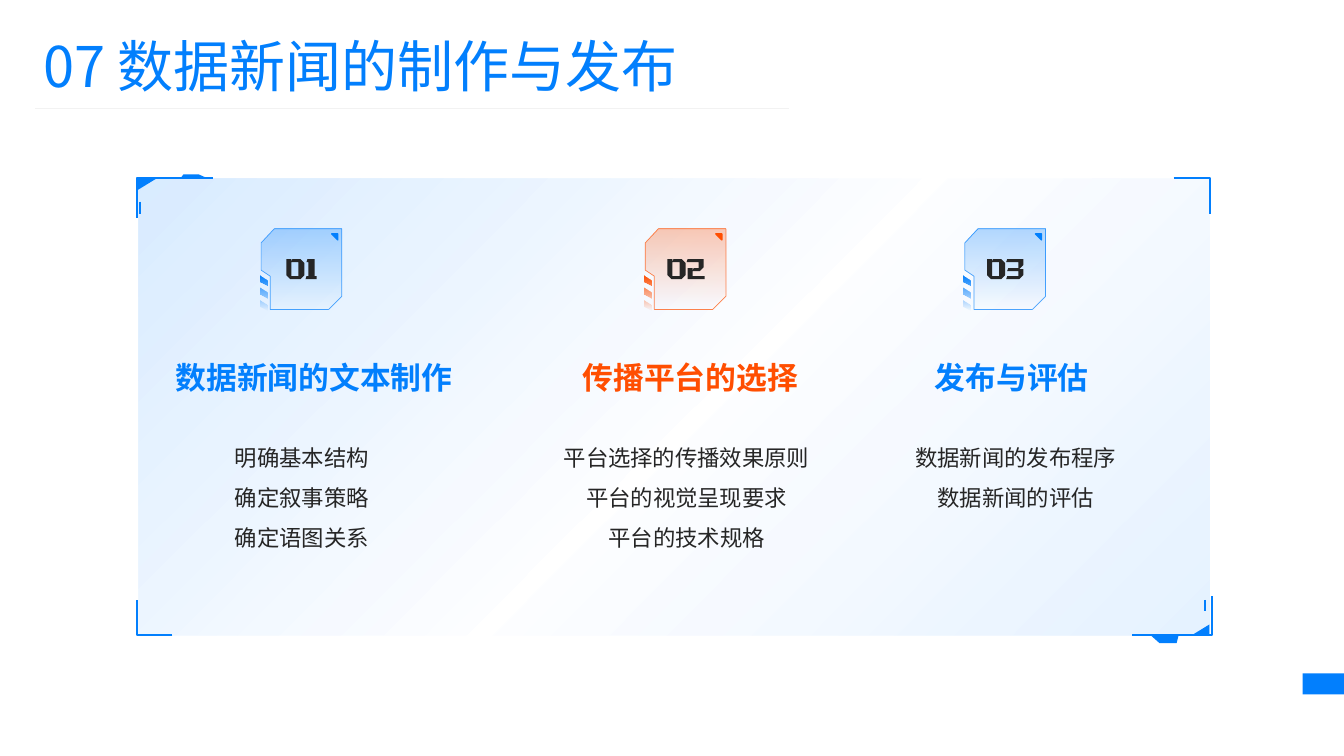
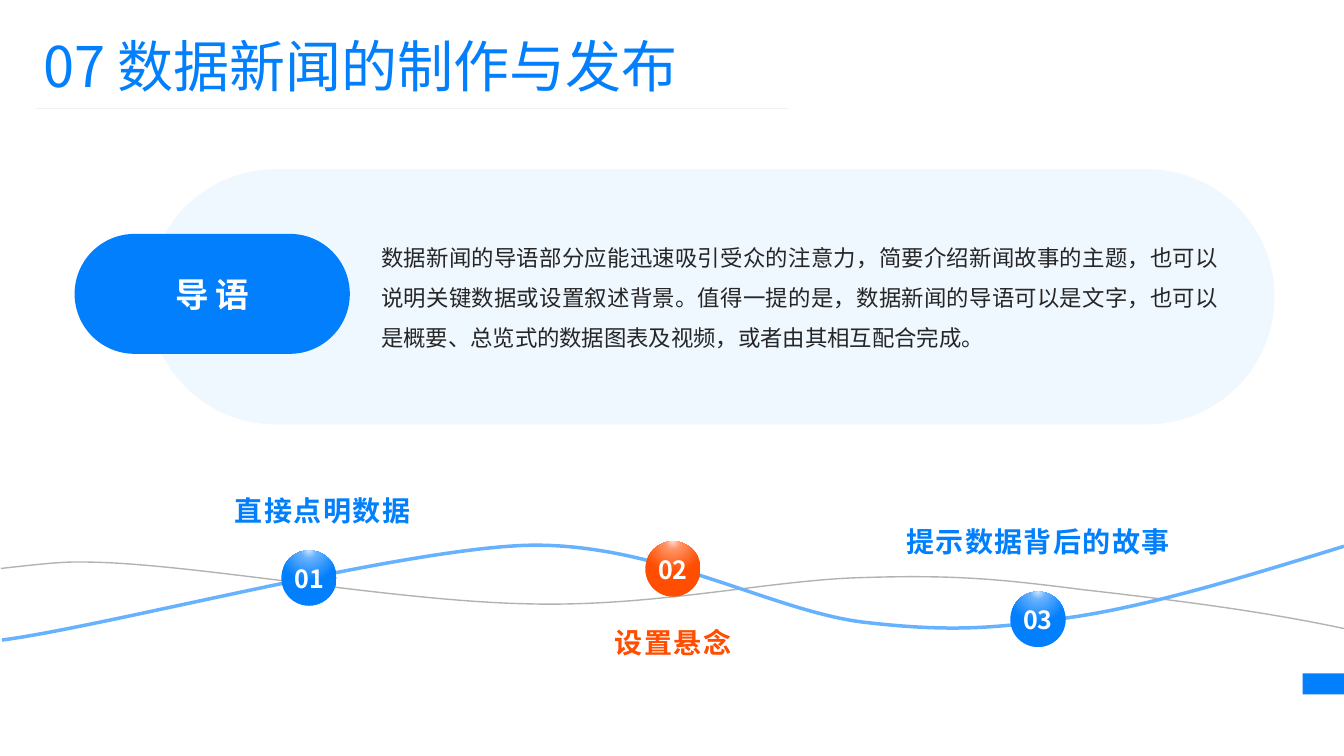
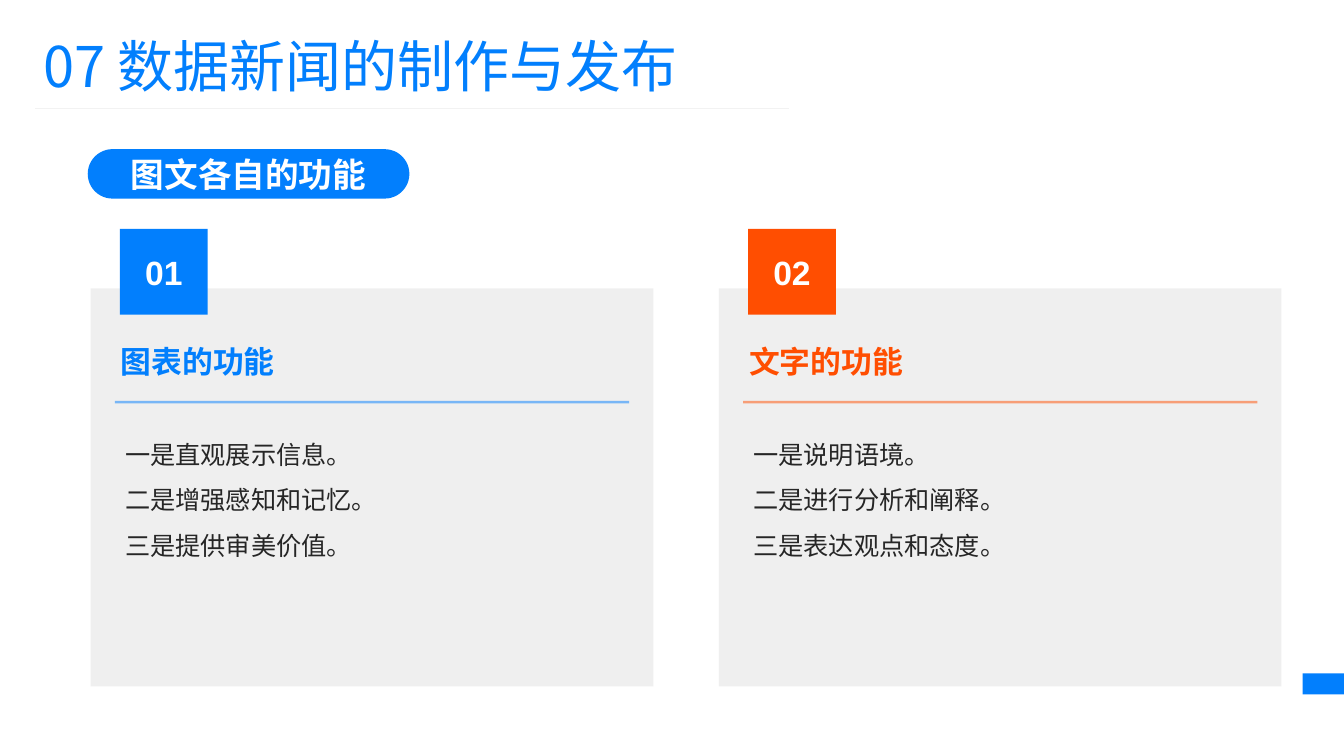
from dataclasses import dataclass

from lxml import etree
from pptx import Presentation
from pptx.dml.color import RGBColor
from pptx.enum.shapes import MSO_CONNECTOR, MSO_SHAPE
from pptx.enum.text import MSO_ANCHOR, PP_ALIGN
from pptx.oxml import parse_xml
from pptx.oxml.ns import nsdecls, qn
from pptx.util import Inches, Pt

RECTANGLE = MSO_SHAPE.RECTANGLE
ROUNDED = MSO_SHAPE.ROUNDED_RECTANGLE
OVAL = MSO_SHAPE.OVAL
TRIANGLE = MSO_SHAPE.ISOSCELES_TRIANGLE
STRAIGHT = MSO_CONNECTOR.STRAIGHT
LEFT, CENTER, JUSTIFY = PP_ALIGN.LEFT, PP_ALIGN.CENTER, PP_ALIGN.JUSTIFY
TOP, MIDDLE, BOTTOM = MSO_ANCHOR.TOP, MSO_ANCHOR.MIDDLE, MSO_ANCHOR.BOTTOM

FONT = "Noto Sans CJK SC"
COLORS = {
    "blue": "027FFD", "orange": "FF4E01", "text": "262626", "white": "FFFFFF",
    "rule": "F2F2F2", "gray": "808080", "card": "999999",
    "pale blue": "CCE5FF", "soft blue": "67B2FE",
    "pale orange": "FFDCCC", "soft orange": "FF9567",
}

Point = tuple[float, float]
Box = tuple[float, float, float, float]
Stop = tuple[int, str, int]


@dataclass
class TextStyle:
    size: float
    color: str = "text"
    bold: bool = False
    align: PP_ALIGN = LEFT
    anchor: MSO_ANCHOR = TOP
    line_spacing: float = 1.0
    tracking: float = 0
    font: str = FONT


@dataclass
class Topic:
    number: str
    color: str
    badge_left: float
    digits_left: float
    heading: str
    heading_box: Box
    lines: list[str]
    lines_box: Box


@dataclass
class Milestone:
    number: str
    color: str
    ball: Point
    label: str
    label_box: Box


@dataclass
class Card:
    number: str
    color: str
    left: float
    heading: str
    lines: list[str]


TITLE = TextStyle(40, "blue")
TOPICS = [
    Topic("01", "blue", 2.59, 2.84, "数据新闻的文本制作", (1.69, 3.56, 2.85, 0.37),
          ["明确基本结构", "确定叙事策略", "确定语图关系"], (1.69, 4.27, 2.61, 1.79)),
    Topic("02", "orange", 6.4, 6.62, "传播平台的选择", (5.19, 3.56, 3.31, 0.37),
          ["平台选择的传播效果原则", "平台的视觉呈现要求", "平台的技术规格"],
          (5.5, 4.27, 2.62, 1.79)),
    Topic("03", "blue", 9.57, 9.79, "发布与评估", (8.26, 3.56, 3.55, 0.37),
          ["数据新闻的发布程序", "数据新闻的评估"], (8.26, 4.27, 3.63, 1.79)),
]
MILESTONES = [
    Milestone("03", "blue", (10.02, 5.87), "提示数据背后的故事", (8.89, 5.16, 2.81, 0.42)),
    Milestone("02", "orange", (6.4, 5.37), "设置悬念", (5.27, 6.16, 2.81, 0.42)),
    Milestone("01", "blue", (2.79, 5.46), "直接点明数据", (1.34, 4.85, 3.72, 0.42)),
]
CARDS = [
    Card("01", "blue", 0.9, "图表的功能",
         ["一是直观展示信息。", "二是增强感知和记忆。", "三是提供审美价值。"]),
    Card("02", "orange", 7.13, "文字的功能",
         ["一是说明语境。", "二是进行分析和阐释。", "三是表达观点和态度。"]),
]
LEAD = ("数据新闻的导语部分应能迅速吸引受众的注意力，简要介绍新闻故事的主题，也可以"
        "说明关键数据或设置叙述背景。值得一提的是，数据新闻的导语可以是文字，也可以"
        "是概要、总览式的数据图表及视频，或者由其相互配合完成。")

# Badge outline and squared numerals, relative to their top left corners
BADGE = [(0.13, 0), (0.8, 0), (0.8, 0.67), (0.67, 0.8), (0.09, 0.8),
         (0.09, 0.47), (0, 0.41), (0, 0.14)]
DIGITS = {
    "0": [[(0, 0), (0.05, 0), (0.05, 0.17), (0.12, 0.17), (0.12, 0.03), (0.05, 0.03),
           (0.06, 0), (0.14, 0), (0.18, 0.04), (0.18, 0.16), (0.14, 0.2), (0.04, 0.2),
           (0, 0.16)]],
    "1": [[(0.02, 0), (0.09, 0), (0.09, 0.17), (0.11, 0.17), (0.11, 0.2), (0, 0.2),
           (0.01, 0.17), (0.03, 0.17), (0.03, 0.03), (0.01, 0.03)]],
    "2": [[(0.01, 0.09), (0.06, 0.09), (0.06, 0.17), (0.18, 0.17), (0.18, 0.2), (0.01, 0.2)],
          [(0.01, 0), (0.17, 0), (0.17, 0.08), (0.13, 0.12), (0.06, 0.12), (0.07, 0.09),
           (0.12, 0.09), (0.12, 0.03), (0, 0.03)]],
    "3": [[(0.01, 0), (0.17, 0), (0.17, 0.06), (0.13, 0.1), (0.17, 0.1), (0.17, 0.16),
           (0.13, 0.2), (0, 0.2), (0.01, 0.17), (0.12, 0.17), (0.12, 0.12), (0.01, 0.12),
           (0.02, 0.09), (0.12, 0.09), (0.12, 0.03), (0, 0.03)]],
}

# Panel corner brackets and tabs
BRACKETS = [
    [(11.64, 1.77), (12, 1.77), (12, 2.12)],
    [(11.23, 6.3), (12.02, 6.3), (12.02, 5.91)],
    [(2.11, 1.77), (1.36, 1.77), (1.36, 2.16)],
    [(1.71, 6.3), (1.36, 6.3), (1.36, 5.95)],
]
TABS = [
    [(11.5, 6.38), (11.41, 6.3), (11.69, 6.3), (11.67, 6.38)],
    [(1.97, 1.73), (2.06, 1.77), (1.79, 1.77), (1.82, 1.73)],
]

# Waves: a start point, then two control points and an end for each curve
GRAY_WAVE = [(0.01, 5.64), (0.63, 5.57), (0.68, 5.57), (1.01, 5.58),
             (2.07, 5.62), (3.92, 5.96), (5.2, 5.99), (6.48, 6.03), (7.65, 5.75),
             (8.57, 5.73), (9.49, 5.7), (9.95, 5.75), (10.74, 5.85),
             (11.52, 5.94), (12.47, 6.05), (13.35, 6.24)]
BLUE_WAVE = [(0.02, 6.35), (1.08, 6.21), (3.95, 5.45), (5.23, 5.41),
             (6.5, 5.38), (7.63, 6.05), (8.54, 6.17), (9.46, 6.28), (9.93, 6.23),
             (10.72, 6.11), (11.52, 5.98), (12.42, 5.7), (13.33, 5.42)]


def rgb(name: str) -> RGBColor:
    return RGBColor.from_string(COLORS[name])


def set_opacity(holder, percent: float) -> None:
    color = holder.find(qn("a:solidFill"))[0]
    etree.SubElement(color, qn("a:alpha"), val=str(int(percent * 1000)))


def paint(shape, fill=None, opacity=100, line=None, width=1.0, line_opacity=100) -> None:
    shape.shadow.inherit = False
    properties = shape._element.spPr
    if fill:
        shape.fill.solid()
        shape.fill.fore_color.rgb = rgb(fill)
        if opacity < 100:
            set_opacity(properties, opacity)
    else:
        shape.fill.background()
    if line:
        shape.line.color.rgb = rgb(line)
        shape.line.width = Pt(width)
        if line_opacity < 100:
            set_opacity(properties.find(qn("a:ln")), line_opacity)
    else:
        shape.line.fill.background()


def make_gradient(stops: list[Stop], angle: int | None = None):
    """Without an angle the gradient is a ball highlight."""
    stop_xml = "".join(
        f'<a:gs pos="{position * 1000}"><a:srgbClr val="{COLORS[color]}">'
        f'<a:alpha val="{opacity * 1000}"/></a:srgbClr></a:gs>'
        for position, color, opacity in stops)
    if angle is None:
        direction = ('<a:path path="circle"><a:fillToRect l="50000" t="-80000" '
                     'r="50000" b="180000"/></a:path>')
    else:
        direction = f'<a:lin ang="{angle * 60000}" scaled="0"/>'
    return parse_xml(f'<a:gradFill {nsdecls("a")} rotWithShape="1">'
                     f'<a:gsLst>{stop_xml}</a:gsLst>{direction}</a:gradFill>')


def set_gradient(shape, stops: list[Stop], angle: int | None = None) -> None:
    properties = shape._element.spPr
    properties.replace(properties.find(qn("a:noFill")), make_gradient(stops, angle))


def write(shape, lines: list[str], style: TextStyle, inset: float = 0, wrap: bool = True) -> None:
    frame = shape.text_frame
    frame.word_wrap = wrap
    frame.vertical_anchor = style.anchor
    frame.margin_left = frame.margin_right = Inches(inset)
    frame.margin_top = frame.margin_bottom = Inches(inset / 2)
    frame.text = "\n".join(lines)
    for paragraph in frame.paragraphs:
        paragraph.alignment = style.align
        paragraph.line_spacing = style.line_spacing
        font = paragraph.font
        font.size, font.bold, font.name = Pt(style.size), style.bold, style.font
        font.color.rgb = rgb(style.color)
        etree.SubElement(font._element, qn("a:ea"), typeface=style.font)
        if style.tracking:
            for run in paragraph.runs:
                run.font._element.set("spc", str(int(style.tracking * 100)))


def add_box(slide, kind, box: Box, fill=None, opacity=100, corner=None):
    shape = slide.shapes.add_shape(kind, *map(Inches, box))
    if corner is not None:
        shape.adjustments[0] = corner
    paint(shape, fill, opacity)
    return shape


def add_text(slide, box: Box, lines: list[str], style: TextStyle, inset: float = 0) -> None:
    write(slide.shapes.add_textbox(*map(Inches, box)), lines, style, inset)


def add_line(slide, start: Point, end: Point, color: str, width: float, opacity=100):
    connector = slide.shapes.add_connector(STRAIGHT, *map(Inches, start + end))
    connector.line.color.rgb = rgb(color)
    connector.line.width = Pt(width)
    properties = connector._element.spPr
    if opacity < 100:
        set_opacity(properties.find(qn("a:ln")), opacity)
    etree.SubElement(properties, qn("a:effectLst"))
    return connector


def add_fading_line(slide, start: Point, end: Point, color: str, width: float) -> None:
    connector = add_line(slide, start, end, color, width)
    line = connector._element.spPr.find(qn("a:ln"))
    line.replace(line.find(qn("a:solidFill")),
                 make_gradient([(0, color, 0), (100, color, 100)], 90))


def add_outline(slide, contours: list[list[Point]], origin: Point = (0, 0), closed=True):
    placed = [[(Inches(origin[0] + x), Inches(origin[1] + y)) for x, y in contour]
              for contour in contours]
    builder = slide.shapes.build_freeform(*placed[0][0], scale=1.0)
    for index, points in enumerate(placed):
        if index:
            builder.move_to(*points[0])
        builder.add_line_segments(points[1:], close=closed)
    return builder.convert_to_shape()


def add_wave(slide, points: list[Point], color: str, width: float, opacity: int) -> None:
    """Draw the control polygon, then join each three segments into one curve."""
    wave = add_outline(slide, [points], closed=False)
    paint(wave, line=color, width=width, line_opacity=opacity)
    segments = list(wave._element.iter(qn("a:lnTo")))
    for first in range(0, len(segments), 3):
        curve = etree.Element(qn("a:cubicBezTo"))
        segments[first].addprevious(curve)
        for segment in segments[first:first + 3]:
            curve.append(segment[0])
            segment.getparent().remove(segment)


def add_corner_triangle(slide, box: Box, rotation: int, color: str, adjustment: float = 0):
    triangle = add_box(slide, TRIANGLE, box, color, corner=adjustment)
    triangle.rotation = rotation
    return triangle


def add_base_slide(presentation):
    """Blank slide with the shared title, rule and side mark."""
    slide = presentation.slides.add_slide(presentation.slide_layouts[6])
    add_box(slide, RECTANGLE, (12.92, 6.68, 0.42, 0.21), "blue")
    add_text(slide, (0.33, 0.26, 7.68, 0.77), ["07 数据新闻的制作与发布"], TITLE, inset=0.1)
    add_line(slide, (0.35, 1.08), (7.83, 1.08), "rule", 0.5)
    return slide


def add_topic(slide, topic: Topic) -> None:
    left, top = topic.badge_left, 2.27
    badge = add_outline(slide, [BADGE], (left, top))
    paint(badge, line=topic.color, width=0.5, line_opacity=70)
    set_gradient(badge, [(0, topic.color, 0), (100, topic.color, 30)], 270)
    corner = add_corner_triangle(slide, (left + 0.7, top + 0.05, 0.06, 0.06), 270,
                                 topic.color, 1)
    paint(corner, topic.color, line=topic.color, width=1)
    stripes = [[(0, y), (0.07, y + 0.05), (0.07, y + 0.11), (0, y + 0.07)]
               for y in (0, 0.12, 0.24)]
    stripe_marks = add_outline(slide, stripes, (left - 0.01, top + 0.46))
    paint(stripe_marks)
    set_gradient(stripe_marks, [(0, topic.color, 0), (100, topic.color, 100)], 270)
    numeral = [[(x + 0.19 * place, y) for x, y in contour]
               for place, digit in enumerate(topic.number) for contour in DIGITS[digit]]
    paint(add_outline(slide, numeral, (topic.digits_left, 2.57)), "text")
    add_text(slide, topic.heading_box, [topic.heading],
             TextStyle(22, topic.color, True, CENTER, BOTTOM))
    add_text(slide, topic.lines_box, topic.lines,
             TextStyle(16, align=CENTER, line_spacing=1.5))


def build_overview(presentation) -> None:
    slide = add_base_slide(presentation)
    # Framed panel
    panel = add_box(slide, RECTANGLE, (1.37, 1.77, 10.63, 4.53))
    set_gradient(panel, [(0, "blue", 15), (52, "blue", 0), (100, "blue", 10)], 45)
    for bracket in BRACKETS:
        paint(add_outline(slide, [bracket], closed=False), line="blue", width=1.5)
    for tab in TABS:
        paint(add_outline(slide, [tab]), "blue")
    add_corner_triangle(slide, (1.4, 1.74, 0.11, 0.18), 90, "blue")
    add_corner_triangle(slide, (11.85, 6.16, 0.11, 0.18), 270, "blue")
    add_line(slide, (1.39, 2), (1.39, 2.12), "blue", 1)
    add_line(slide, (11.95, 5.95), (11.95, 6.06), "blue", 1)
    # Three topics and the dividers between them
    for topic in TOPICS:
        add_topic(slide, topic)
    for x, color in ((5.02, "orange"), (8.59, "blue")):
        add_fading_line(slide, (x, 3.85), (x, 6.11), color, 0.75)


def add_milestone(slide, milestone: Milestone) -> None:
    color = milestone.color
    label = add_box(slide, ROUNDED, milestone.label_box, corner=0.5)
    write(label, [milestone.label], TextStyle(20, color, True, CENTER, MIDDLE, tracking=1))
    ball = add_box(slide, OVAL, (*milestone.ball, 0.55, 0.55))
    set_gradient(ball, [(0, f"pale {color}", 100), (21, f"soft {color}", 100),
                        (80, color, 100)])
    write(ball, [milestone.number], TextStyle(17.9, "white", True, CENTER, MIDDLE), wrap=False)


def build_lead(presentation) -> None:
    slide = add_base_slide(presentation)
    # Definition
    add_box(slide, ROUNDED, (1.47, 1.68, 11.17, 2.53), "pale blue", 30, corner=0.5)
    pill = add_box(slide, ROUNDED, (0.74, 2.32, 2.73, 1.19), "blue", corner=0.5)
    write(pill, ["导语"], TextStyle(24, "white", True, CENTER, MIDDLE, tracking=5))
    add_text(slide, (3.78, 2.18, 8.31, 1.41), [LEAD],
             TextStyle(16, align=JUSTIFY, anchor=MIDDLE, line_spacing=1.5))
    # Waves with three milestones
    add_wave(slide, GRAY_WAVE, "gray", 1, 60)
    add_wave(slide, BLUE_WAVE, "soft blue", 2.5, 100)
    for milestone in MILESTONES:
        add_milestone(slide, milestone)


def add_card(slide, card: Card) -> None:
    left = card.left
    add_box(slide, ROUNDED, (left, 2.86, 5.58, 3.95), "card", 15, corner=0)
    add_text(slide, (left + 0.34, 4.21, 4.91, 2.4), card.lines,
             TextStyle(18, line_spacing=1.5))
    number = add_box(slide, ROUNDED, (left + 0.29, 2.27, 0.87, 0.85), card.color, corner=0)
    write(number, [card.number],
          TextStyle(24, "white", True, CENTER, MIDDLE, font="Arial"), wrap=False)
    add_line(slide, (left + 0.24, 3.99), (left + 5.34, 3.99), card.color, 1.75, 50)
    add_text(slide, (left + 0.3, 3.34, 4.91, 0.48), [card.heading],
             TextStyle(22, card.color, True, anchor=MIDDLE))


def build_functions(presentation) -> None:
    slide = add_base_slide(presentation)
    pill = add_box(slide, ROUNDED, (0.87, 1.48, 3.19, 0.49), "blue", corner=0.5)
    write(pill, ["图文各自的功能"], TextStyle(24, "white", True, CENTER, MIDDLE), inset=0.1)
    for card in CARDS:
        add_card(slide, card)


def main() -> None:
    presentation = Presentation()
    presentation.slide_width, presentation.slide_height = Inches(13.33), Inches(7.5)
    build_overview(presentation)
    build_lead(presentation)
    build_functions(presentation)
    presentation.save("out.pptx")


if __name__ == "__main__":
    main()
